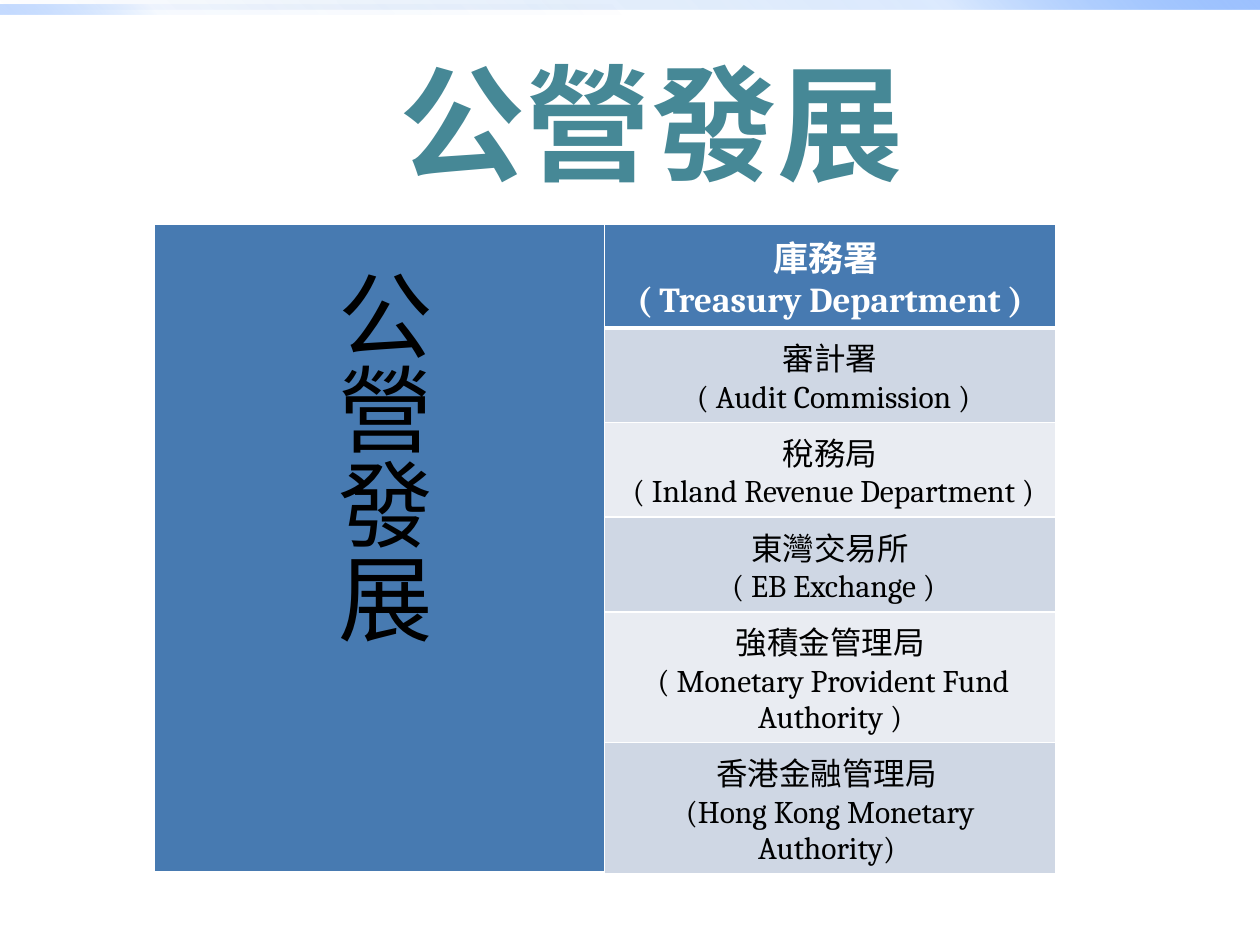
from typing import NamedTuple

from lxml import etree
from pptx import Presentation
from pptx import util as u
from pptx.dml.color import RGBColor
from pptx.enum import shapes, text
from pptx.oxml.ns import qn

FONT = "Cambria"
WHITE = RGBColor(0xFF, 0xFF, 0xFF)
BLACK = RGBColor(0x00, 0x00, 0x00)
HEADER_BLUE = RGBColor(0x47, 0x7A, 0xB1)
BAND_DARK = RGBColor(0xCF, 0xD7, 0xE4)
BAND_LIGHT = RGBColor(0xE9, 0xEC, 0xF2)
BAR_DEEP = RGBColor(0x00, 0x58, 0xB7)
BAR_MID = RGBColor(0x4F, 0x95, 0xFF)
BAR_PALE = RGBColor(0x9E, 0xC2, 0xFF)
TEAL_PALE = RGBColor(0x90, 0xBF, 0xCB)
TEAL_MID = RGBColor(0x46, 0x88, 0x96)
TEAL_DEEP = RGBColor(0x1C, 0x77, 0x89)


class Frame(NamedTuple):
    left: float
    top: float
    width: float
    height: float

    def lengths(self) -> list:
        return [u.Cm(value) for value in self]


class Stop(NamedTuple):
    position: int
    color: RGBColor
    opacity: int = 100


class Bar(NamedTuple):
    frame: Frame
    stops: list[Stop]
    angle: int


class Agency(NamedTuple):
    chinese: str
    english: str


BARS = [
    Bar(Frame(0, 0, 25.4, 0.2),
        [Stop(0, BAR_DEEP, 0), Stop(75, BAR_MID, 20), Stop(100, BAR_PALE)], 315),
    Bar(Frame(0, 0.1, 12.7, 0.2),
        [Stop(0, BAR_DEEP, 0), Stop(75, BAR_MID, 5), Stop(100, BAR_PALE, 60)], 135),
]
TITLE_STOPS = [Stop(0, TEAL_PALE), Stop(75, TEAL_MID), Stop(100, TEAL_DEEP)]
AGENCIES = [
    Agency("庫務署 ", "( Treasury Department )"),
    Agency("審計署", " ( Audit Commission )"),
    Agency("稅務局", " ( Inland Revenue Department )"),
    Agency("東灣交易所", " ( EB Exchange )"),
    Agency("強積金管理局", " ( Monetary Provident Fund Authority )"),
    Agency("香港金融管理局 ", "(Hong Kong Monetary Authority) "),
]
TABLE_LEFT, TABLE_TOP = 3.1, 4.52
COLUMN_WIDTH, ROW_HEIGHT = 9.09, 1.73


def set_gradient(fill, owner, stops: list[Stop], angle: int) -> None:
    """Fill with several stops, each with its own opacity (angle clockwise)."""
    fill.gradient()
    gradient = owner.find(".//" + qn("a:gradFill"))
    for child in list(gradient):
        gradient.remove(child)
    stop_list = etree.SubElement(gradient, qn("a:gsLst"))
    for stop in stops:
        mark = etree.SubElement(stop_list, qn("a:gs"), pos=str(stop.position * 1000))
        color = etree.SubElement(mark, qn("a:srgbClr"), val=str(stop.color))
        if stop.opacity < 100:
            etree.SubElement(color, qn("a:alpha"), val=str(stop.opacity * 1000))
    etree.SubElement(gradient, qn("a:lin"), ang=str(angle * 60000), scaled="0")


def set_borders(cell, bottom: float) -> None:
    properties = cell._tc.get_or_add_tcPr()
    widths = {"a:lnL": 1, "a:lnR": 1, "a:lnT": 1, "a:lnB": bottom}
    for index, (tag, width) in enumerate(widths.items()):
        line = etree.Element(qn(tag), w=str(u.Pt(width)))
        solid = etree.SubElement(line, qn("a:solidFill"))
        etree.SubElement(solid, qn("a:srgbClr"), val=str(WHITE))
        properties.insert(index, line)


def format_text(frame, size: float, color: RGBColor, bold: bool) -> None:
    for para in frame.paragraphs:
        for span in para.runs:
            span.font.name = FONT
            span.font.size = u.Pt(size)
            span.font.bold = bold
            span.font.color.rgb = color


def draw_bar(page, bar: Bar) -> None:
    box = page.shapes.add_shape(shapes.MSO_SHAPE.RECTANGLE, *bar.frame.lengths())
    box.shadow.inherit = False
    box.line.fill.background()
    set_gradient(box.fill, box._element, bar.stops, bar.angle)


def draw_text(page, frame: Frame, wording: str, size: float, color: RGBColor,
              bold: bool = False):
    box = page.shapes.add_textbox(*frame.lengths())
    box.text_frame.text = wording
    box.text_frame.word_wrap = True
    box.text_frame.auto_size = text.MSO_AUTO_SIZE.SHAPE_TO_FIT_TEXT
    format_text(box.text_frame, size, color, bold)
    return box


def draw_table(page, agencies: list[Agency]) -> None:
    count = len(agencies)
    frame = Frame(TABLE_LEFT, TABLE_TOP, 2 * COLUMN_WIDTH, count * ROW_HEIGHT)
    table = page.shapes.add_table(count, 2, *frame.lengths()).table
    table.cell(0, 0).merge(table.cell(count - 1, 0))
    for row, agency in enumerate(agencies):
        header = row == 0
        table.rows[row].height = u.Cm(ROW_HEIGHT)
        band = HEADER_BLUE if header else (BAND_DARK if row % 2 else BAND_LIGHT)
        for column, color in enumerate([HEADER_BLUE, band]):
            cell = table.cell(row, column)
            cell.fill.solid()
            cell.fill.fore_color.rgb = color
            set_borders(cell, 3 if header else 1)
        cell = table.cell(row, 1)
        cell.text_frame.text = "\n".join(agency)
        for para in cell.text_frame.paragraphs:
            para.alignment = text.PP_ALIGN.CENTER
        format_text(cell.text_frame, 20 if header else 18,
                    WHITE if header else BLACK, header)


def main() -> None:
    deck = Presentation()
    deck.slide_width, deck.slide_height = u.Cm(25.4), u.Cm(19.05)
    page = deck.slides.add_slide(deck.slide_layouts[6])

    # Gradient bars along the top edge
    for bar in BARS:
        draw_bar(page, bar)

    # Table of agencies
    draw_table(page, AGENCIES)

    # Vertical label over the merged column
    label = draw_text(page, Frame(6.15, 5.16, 2.82, 8.74), "公營發展", 54, BLACK)
    label.text_frame._txBody.bodyPr.set("vert", "eaVert")

    # Title
    title = draw_text(page, Frame(7.14, 0.79, 11.99, 3.33), "公營發展", 72,
                      TEAL_MID, bold=True)
    para = title.text_frame.paragraphs[0]
    para.alignment = text.PP_ALIGN.CENTER
    set_gradient(para.runs[0].font.fill, title.text_frame._txBody, TITLE_STOPS, 90)

    deck.save("out.pptx")


if __name__ == "__main__":
    main()
